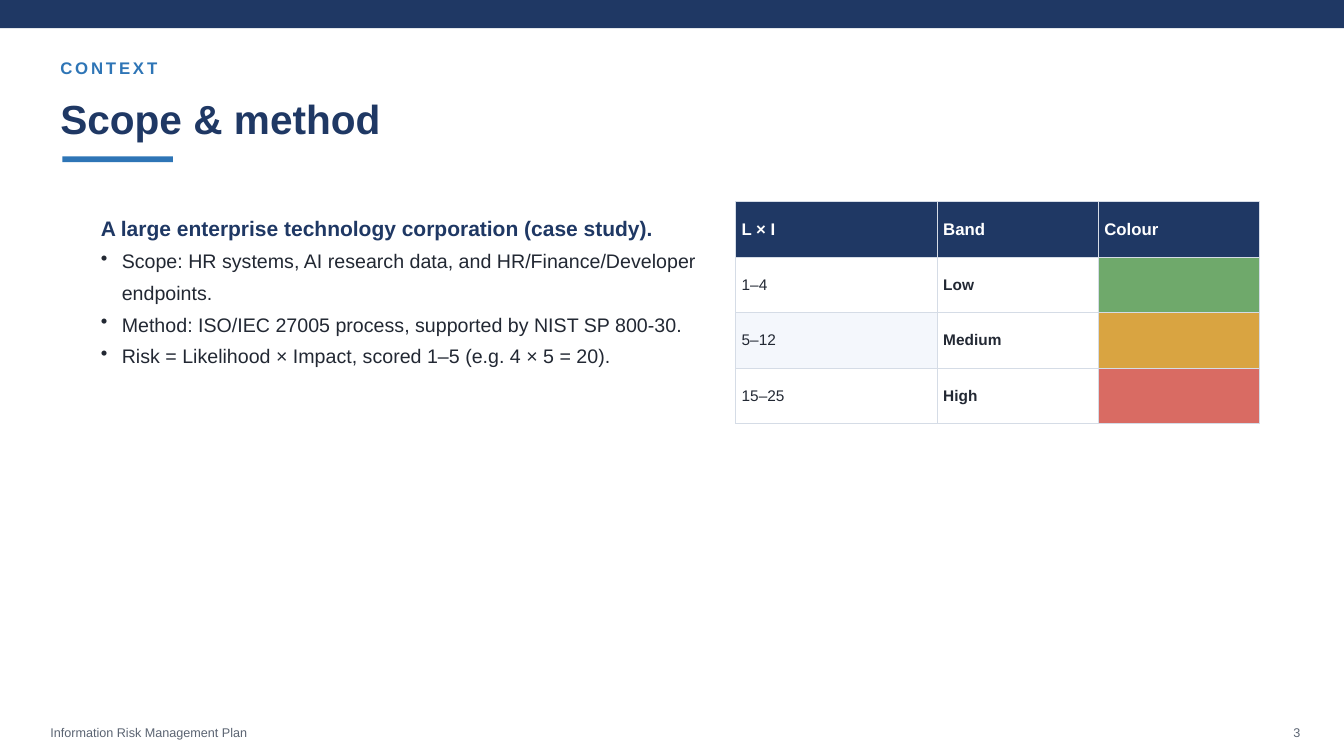
from lxml import etree
from pptx import Presentation
from pptx.dml.color import RGBColor
from pptx.enum.shapes import MSO_SHAPE
from pptx.enum.text import MSO_ANCHOR, MSO_AUTO_SIZE, PP_ALIGN
from pptx.oxml.ns import qn
from pptx.util import Cm, Pt

RECT = MSO_SHAPE.RECTANGLE
MIDDLE, TOP = MSO_ANCHOR.MIDDLE, MSO_ANCHOR.TOP
GROW = MSO_AUTO_SIZE.SHAPE_TO_FIT_TEXT
LEFT, RIGHT = PP_ALIGN.LEFT, PP_ALIGN.RIGHT
FONT = "Arial"
COLORS = {
    "navy": "1F3864", "blue": "2E75B6", "ink": "222833", "grey": "5B6472",
    "white": "FFFFFF", "pale": "F4F7FC", "border": "D5DCE6",
    "green": "6FA96B", "amber": "D9A441", "red": "D96B63",
}


def style(para, size, color, bold=False):
    for run in para.runs:
        run.font.name = FONT
        run.font.size = Pt(size)
        run.font.bold = bold
        run.font.color.rgb = RGBColor.from_string(COLORS[color])


def add_text(box, lines, inset=0, anchor=MIDDLE):
    frame = slide.shapes.add_textbox(*map(Cm, box)).text_frame
    frame.word_wrap = True
    frame.auto_size = GROW
    frame.vertical_anchor = anchor
    frame.margin_left = frame.margin_right = Cm(inset)
    frame.margin_top = frame.margin_bottom = Cm(inset)
    frame.text = "\n".join(lines)
    return frame.paragraphs


deck = Presentation()
deck.slide_width, deck.slide_height = Cm(33.87), Cm(19.05)
slide = deck.slides.add_slide(deck.slide_layouts[6])

# Top band and title rule
for box, color in [((0, 0, 33.87, 0.71), "navy"),
                   ((1.57, 3.94, 2.79, 0.15), "blue")]:
    bar = slide.shapes.add_shape(RECT, *map(Cm, box))
    bar.shadow.inherit = False
    bar.fill.solid()
    bar.fill.fore_color.rgb = RGBColor.from_string(COLORS[color])
    bar.line.fill.background()

# Heading and footer
labels = [
    ("CONTEXT", (1.52, 1.47, 30.48, 0.48), 12, "blue", True, LEFT, 200),
    ("Scope & method", (1.52, 2.41, 30.73, 1.14), 29, "navy", True, LEFT, 0),
    ("Information Risk Management Plan", (1.27, 18.29, 25.4, 0.36),
     9, "grey", False, LEFT, 0),
    ("3", (31.5, 18.29, 1.27, 0.36), 9, "grey", False, RIGHT, 0),
]
for text, box, size, color, bold, align, gap in labels:
    para = add_text(box, [text])[0]
    para.alignment = align
    style(para, size, color, bold)
    if gap:
        para.runs[0].font._element.set("spc", str(gap))

# Scope and method points
points = add_text((2.41, 5.08, 15.49, 3.89), [
    "A large enterprise technology corporation (case study).",
    "Scope: HR systems, AI research data, and HR/Finance/Developer endpoints.",
    "Method: ISO/IEC 27005 process, supported by NIST SP 800-30.",
    "Risk = Likelihood × Impact, scored 1–5 (e.g. 4 × 5 = 20).",
], 0.13, TOP)
for i, para in enumerate(points):
    para.line_spacing = 1.35
    if i == 0:
        style(para, 15, "navy", True)
        continue
    style(para, 14, "ink")
    props = para._p.get_or_add_pPr()
    props.set("marL", str(Cm(0.53)))
    props.set("indent", str(-Cm(0.53)))
    etree.SubElement(props, qn("a:buChar"), char="•")

# Risk band table
rows = [
    (("L × I", "navy"), ("Band", "navy"), ("Colour", "navy")),
    (("1–4", "white"), ("Low", "white"), ("", "green")),
    (("5–12", "pale"), ("Medium", "white"), ("", "amber")),
    (("15–25", "white"), ("High", "white"), ("", "red")),
]
widths = [5.08, 4.06, 4.06]
table = slide.shapes.add_table(len(rows), len(widths), Cm(18.54), Cm(5.08),
                               Cm(sum(widths)), Cm(5.6)).table
for col, width in zip(table.columns, widths):
    col.width = Cm(width)
for r, row in enumerate(rows):
    table.rows[r].height = Cm(1.4)
    for c, (text, color) in enumerate(row):
        cell = table.cell(r, c)
        cell.text = text
        cell.vertical_anchor = MIDDLE
        cell.margin_left = cell.margin_right = Cm(0.15)
        cell.margin_top = cell.margin_bottom = Cm(0.15)
        para = cell.text_frame.paragraphs[0]
        if r == 0:
            style(para, 12, "white", True)
        else:
            style(para, 11, "ink", c == 1)
        # Borders go ahead of the fill
        props = cell._tc.get_or_add_tcPr()
        for side in ("lnL", "lnR", "lnT", "lnB"):
            line = etree.SubElement(props, qn("a:" + side), w=str(Pt(1)))
            solid = etree.SubElement(line, qn("a:solidFill"))
            etree.SubElement(solid, qn("a:srgbClr"), val=COLORS["border"])
        cell.fill.solid()
        cell.fill.fore_color.rgb = RGBColor.from_string(COLORS[color])

deck.save("out.pptx")
